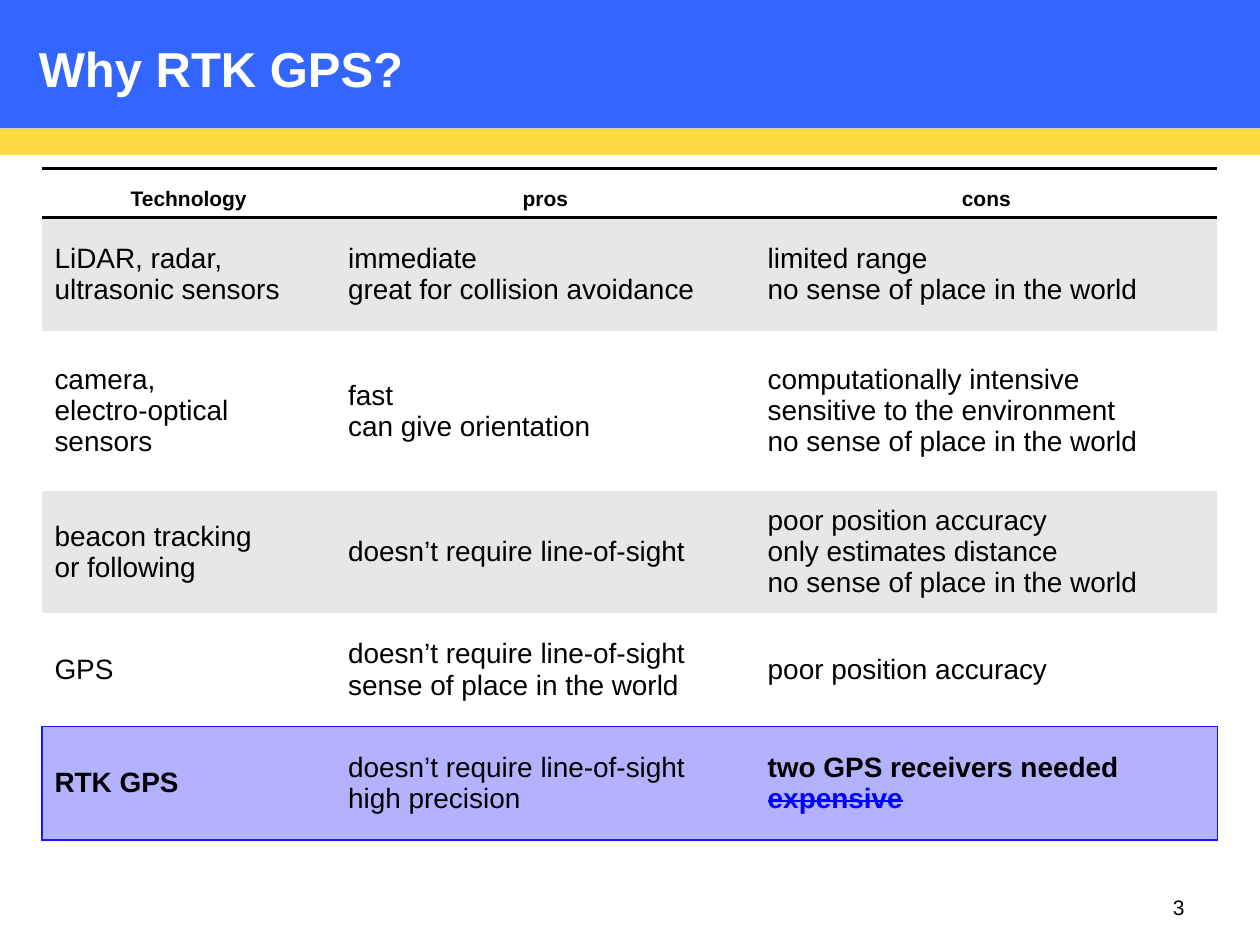
from dataclasses import dataclass

from lxml import etree
from pptx import Presentation
from pptx.dml.color import RGBColor
from pptx.enum.shapes import MSO_SHAPE
from pptx.enum.text import MSO_ANCHOR, PP_ALIGN
from pptx.oxml.ns import qn
from pptx.util import Inches, Pt

RECTANGLE = MSO_SHAPE.RECTANGLE
MIDDLE, BOTTOM = MSO_ANCHOR.MIDDLE, MSO_ANCHOR.BOTTOM
LEFT, CENTER, RIGHT = PP_ALIGN.LEFT, PP_ALIGN.CENTER, PP_ALIGN.RIGHT
WIDTH, HEIGHT = Inches(10), Inches(7.5)
FONT = "Arial"
PLAIN_TABLE = "{2D5ABB26-0587-4C30-8999-92F81FD0307C}"
COLORS = {
    "blue": "3366FF",
    "yellow": "FFDB43",
    "white": "FFFFFF",
    "black": "000000",
    "gray": "E7E7E7",
    "lilac": "B2B2FF",
    "outline": "1818FF",
    "struck": "0000FF",
}
COLUMN_WIDTHS = (2.33, 3.33, 3.67)


@dataclass(frozen=True)
class Area:
    left: float
    top: float
    width: float
    height: float

    def emu(self) -> tuple[int, int, int, int]:
        return (int(self.left * WIDTH), int(self.top * HEIGHT),
                int(self.width * WIDTH), int(self.height * HEIGHT))


@dataclass(frozen=True)
class Line:
    text: str
    size: float = 16
    bold: bool = False
    color: str = "black"
    align: PP_ALIGN = LEFT
    strike: bool = False


@dataclass(frozen=True)
class Row:
    height: float
    cells: tuple[tuple[Line, ...], ...]
    fill: str = "white"
    top: tuple[str, float] | None = None
    bottom: tuple[str, float] | None = None
    sides: tuple[str, float] | None = None
    anchor: MSO_ANCHOR = MIDDLE


def lines(*texts: str, **style) -> tuple[Line, ...]:
    return tuple(Line(text, **style) for text in texts)


HEAVY, THIN = ("black", 2), ("outline", 1)
HEADING = {"size": 12, "bold": True, "align": CENTER}
LOST = "no sense of place in the world"
NO_SIGHT = "doesn’t require line-of-sight"
POOR = "poor position accuracy"
ROWS = (
    Row(0.39, tuple(lines(name, **HEADING) for name in ("Technology", "pros", "cons")),
        top=HEAVY, bottom=HEAVY, anchor=BOTTOM),
    Row(0.9, (lines("LiDAR, radar, ultrasonic sensors"),
              lines("immediate", "great for collision avoidance"),
              lines("limited range", LOST)), "gray"),
    Row(1.27, (lines("camera,\nelectro-optical sensors"),
               lines("fast", "can give orientation"),
               lines("computationally intensive", "sensitive to the environment", LOST))),
    Row(0.97, (lines("beacon tracking\nor following"),
               lines(NO_SIGHT),
               lines(POOR, "only estimates distance", LOST)), "gray"),
    Row(0.9, (lines("GPS"),
              lines(NO_SIGHT, "sense of place in the world"),
              lines(POOR)), bottom=THIN),
    Row(0.9, (lines("RTK GPS", bold=True),
              lines(NO_SIGHT, "high precision"),
              (Line("two GPS receivers needed", bold=True),
               Line("expensive", bold=True, color="struck", strike=True))),
        "lilac", top=THIN, bottom=THIN, sides=THIN),
)


def rgb(name: str) -> RGBColor:
    return RGBColor.from_string(COLORS[name])


def write(frame, content: tuple[Line, ...]) -> None:
    for index, line in enumerate(content):
        paragraph = frame.add_paragraph() if index else frame.paragraphs[0]
        paragraph.text = line.text
        paragraph.alignment = line.align
        font = paragraph.font
        font.name, font.size, font.bold = FONT, Pt(line.size), line.bold
        font.color.rgb = rgb(line.color)
        if line.strike:
            for run in paragraph.runs:
                run.font._element.set("strike", "sngStrike")


def add_band(slide, area: Area, color: str) -> None:
    band = slide.shapes.add_shape(RECTANGLE, *area.emu())
    band.shadow.inherit = False
    band.fill.solid()
    band.fill.fore_color.rgb = rgb(color)
    band.line.fill.background()


def add_text(slide, area: Area, line: Line, anchor: MSO_ANCHOR) -> None:
    frame = slide.shapes.add_textbox(*area.emu()).text_frame
    frame.word_wrap = True
    frame.vertical_anchor = anchor
    write(frame, (line,))


def add_border(cell, side: str, border: tuple[str, float] | None) -> None:
    if border is None:
        return
    color, points = border
    edge = etree.SubElement(cell._tc.get_or_add_tcPr(), qn(f"a:ln{side}"), w=str(Pt(points)))
    fill = etree.SubElement(edge, qn("a:solidFill"))
    etree.SubElement(fill, qn("a:srgbClr"), val=COLORS[color])


def add_comparison(slide, area: Area) -> None:
    table = slide.shapes.add_table(len(ROWS), len(COLUMN_WIDTHS), *area.emu()).table
    table._tbl.tblPr.find(qn("a:tableStyleId")).text = PLAIN_TABLE
    table.first_row = table.horz_banding = False
    for column, width in zip(table.columns, COLUMN_WIDTHS):
        column.width = Inches(width)
    last = len(COLUMN_WIDTHS) - 1
    for table_row, row in zip(table.rows, ROWS):
        table_row.height = Inches(row.height)
        for index, (cell, content) in enumerate(zip(table_row.cells, row.cells)):
            add_border(cell, "L", row.sides if index == 0 else None)
            add_border(cell, "R", row.sides if index == last else None)
            add_border(cell, "T", row.top)
            add_border(cell, "B", row.bottom)
            cell.fill.solid()
            cell.fill.fore_color.rgb = rgb(row.fill)
            cell.vertical_anchor = row.anchor
            write(cell.text_frame, content)


def main() -> None:
    deck = Presentation()
    deck.slide_width, deck.slide_height = WIDTH, HEIGHT
    slide = deck.slides.add_slide(deck.slide_layouts[6])
    add_band(slide, Area(0, 0, 1, 0.136), "blue")
    add_band(slide, Area(0, 0.136, 1, 0.028), "yellow")
    add_text(slide, Area(0.021, 0.007, 0.904, 0.129),
             Line("Why RTK GPS?", 28, True, "white"), MIDDLE)
    add_text(slide, Area(0.9, 0.911, 0.05, 0.069), Line("3", 12, align=RIGHT), BOTTOM)
    add_comparison(slide, Area(0.0333, 0.1783, 0.933, 0.711))
    deck.save("out.pptx")


if __name__ == "__main__":
    main()
